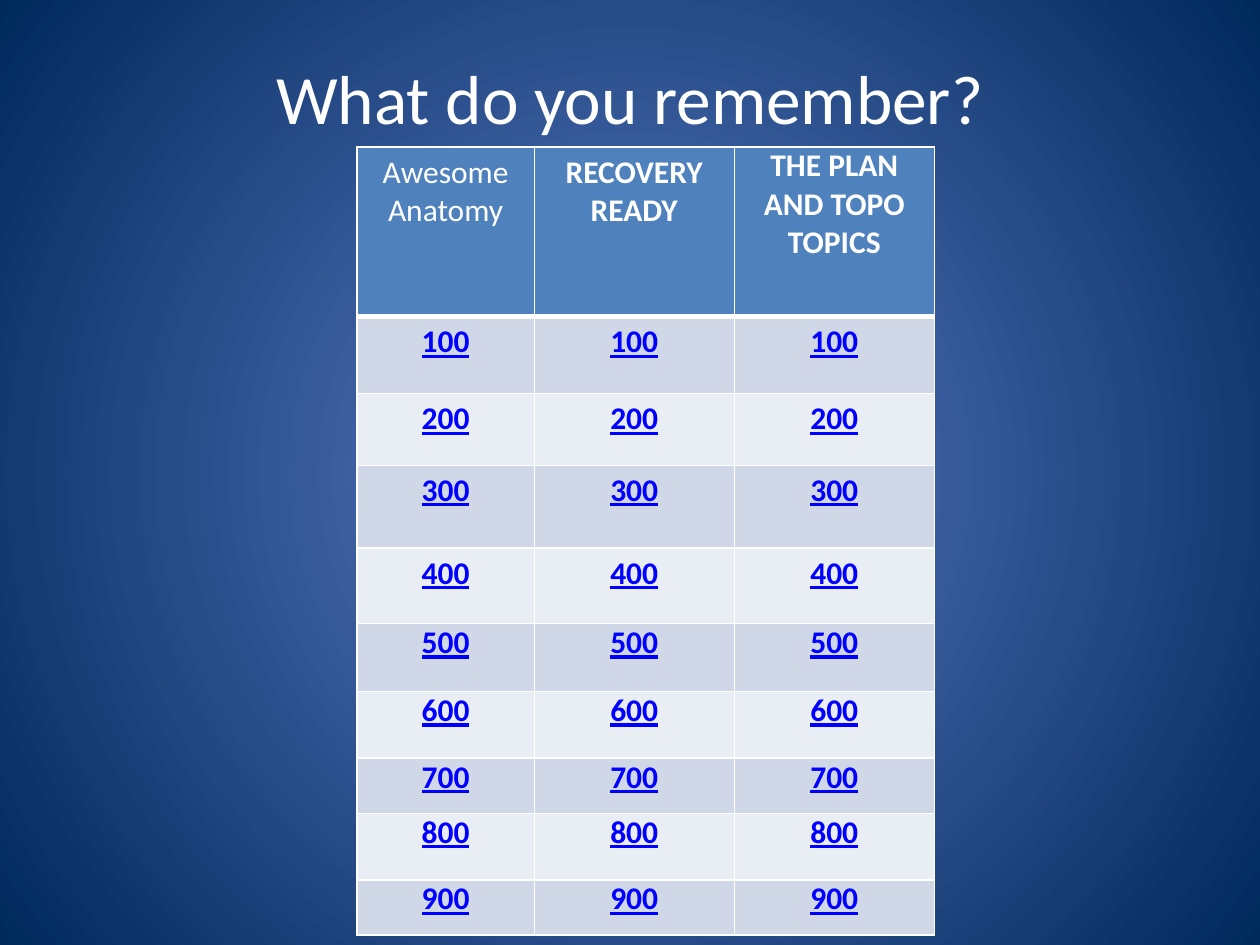
import pptx
import pptx.dml.color
import pptx.enum.text
import pptx.oxml
import pptx.oxml.ns
import pptx.util

Pt = pptx.util.Pt
NAMESPACE = pptx.oxml.ns.nsdecls("a")


def colour(value):
    return pptx.dml.color.RGBColor.from_string(value)


class QuizBoard:
    font_name = "Calibri"
    white = "FFFFFF"
    header_fill = "4F81BD"
    band_fills = ("D0D8E8", "E9EDF4")
    link_colour = "0000FF"
    side_inset = 5.04

    def __init__(self, slide):
        self.slide = slide

    def background(self, inner, outer):
        fill = self.slide.background.fill
        fill.gradient()
        for stop, position, value in zip(fill.gradient_stops, (0, 1), (inner, outer)):
            stop.position = position
            stop.color.rgb = colour(value)
        linear = next(self.slide.element.iter(pptx.oxml.ns.qn("a:lin")))
        radial = pptx.oxml.parse_xml(
            f'<a:path {NAMESPACE} path="circle">'
            '<a:fillToRect l="50000" t="50000" r="50000" b="50000"/></a:path>'
        )
        linear.getparent().replace(linear, radial)

    def add_text(self, text_frame, text, size, value, bold=False, underline=False):
        text_frame.word_wrap = True
        paragraph = text_frame.paragraphs[0]
        paragraph.alignment = pptx.enum.text.PP_ALIGN.CENTER
        run = paragraph.add_run()
        run.text = text
        run.font.name = self.font_name
        run.font.size = Pt(size)
        run.font.bold = bold
        run.font.underline = underline
        run.font.color.rgb = colour(value)

    def title(self, text, left, top, width, height):
        shape = self.slide.shapes.add_textbox(Pt(left), Pt(top), Pt(width), Pt(height))
        shape.text_frame.vertical_anchor = pptx.enum.text.MSO_ANCHOR.MIDDLE
        self.add_text(shape.text_frame, text, 39.6, self.white)

    def borders(self, cell, bottom_width):
        properties = cell._tc.get_or_add_tcPr()
        widths = {"lnL": 1, "lnR": 1, "lnT": 1, "lnB": bottom_width}
        for index, (side, width) in enumerate(widths.items()):
            line = pptx.oxml.parse_xml(
                f'<a:{side} {NAMESPACE} w="{Pt(width)}"><a:solidFill>'
                f'<a:srgbClr val="{self.white}"/></a:solidFill></a:{side}>'
            )
            properties.insert(index, line)

    def cell(self, cell, text, fill, value, bold, underline, tight, bottom_width):
        cell.fill.solid()
        cell.fill.fore_color.rgb = colour(fill)
        if tight:
            cell.margin_left = cell.margin_right = Pt(self.side_inset)
            cell.margin_top = cell.margin_bottom = Pt(0)
        self.add_text(cell.text_frame, text, 18, value, bold, underline)
        self.borders(cell, bottom_width)

    def table(self, headings, scores, left, top, widths, heights):
        table = self.slide.shapes.add_table(
            len(heights), len(widths), Pt(left), Pt(top), Pt(sum(widths)), Pt(sum(heights))
        ).table
        for column, width in zip(table.columns, widths):
            column.width = Pt(width)
        for row, height in zip(table.rows, heights):
            row.height = Pt(height)
        for column, heading in enumerate(headings):
            self.cell(table.cell(0, column), heading, self.header_fill, self.white,
                      bold=column > 0, underline=False, tight=column == 2, bottom_width=3)
            for row, score in enumerate(scores, 1):
                self.cell(table.cell(row, column), str(score), self.band_fills[(row - 1) % 2],
                          self.link_colour, bold=True, underline=True,
                          tight=score >= 500, bottom_width=1)


def main():
    presentation = pptx.Presentation()
    presentation.slide_width = Pt(720)
    presentation.slide_height = Pt(540)
    board = QuizBoard(presentation.slides.add_slide(presentation.slide_layouts[6]))
    board.background("5E7CC5", "00295C")
    board.title("What do you remember?", 36, 36, 648, 38)
    board.table(
        ["Awesome Anatomy", "RECOVERY READY", "THE PLAN AND TOPO TOPICS"],
        range(100, 1000, 100),
        204, 84,
        [101.3, 114.3, 114.3],
        [96.9, 44, 41, 47.3, 43.2, 38.9, 38, 31.6, 38, 31.6],
    )
    presentation.save("out.pptx")


if __name__ == "__main__":
    main()
